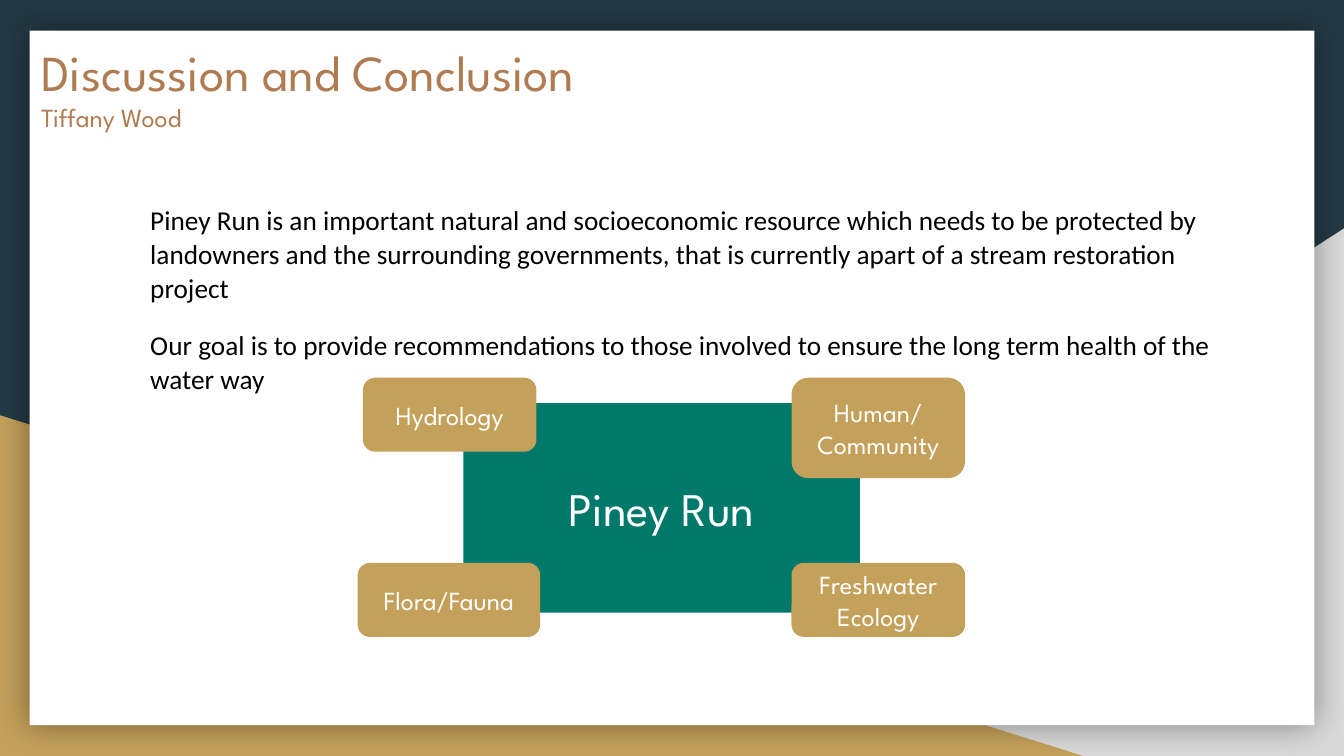
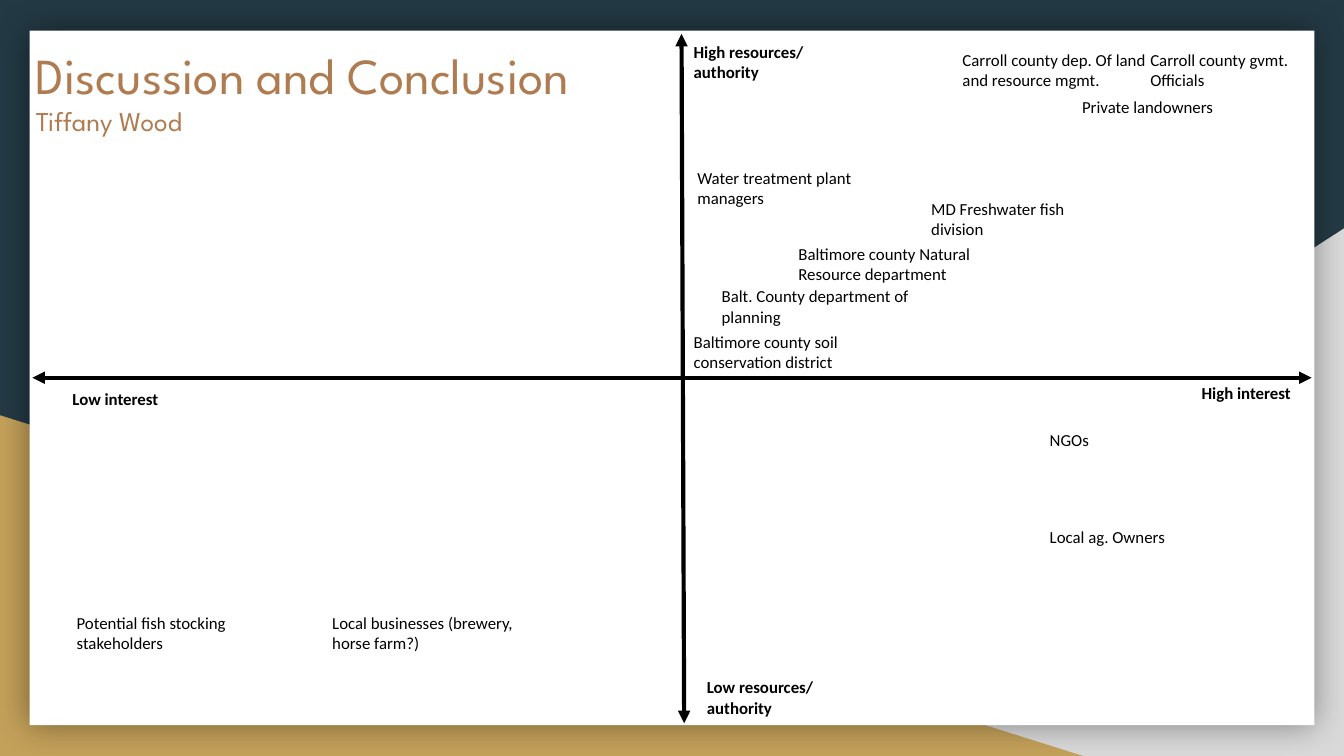
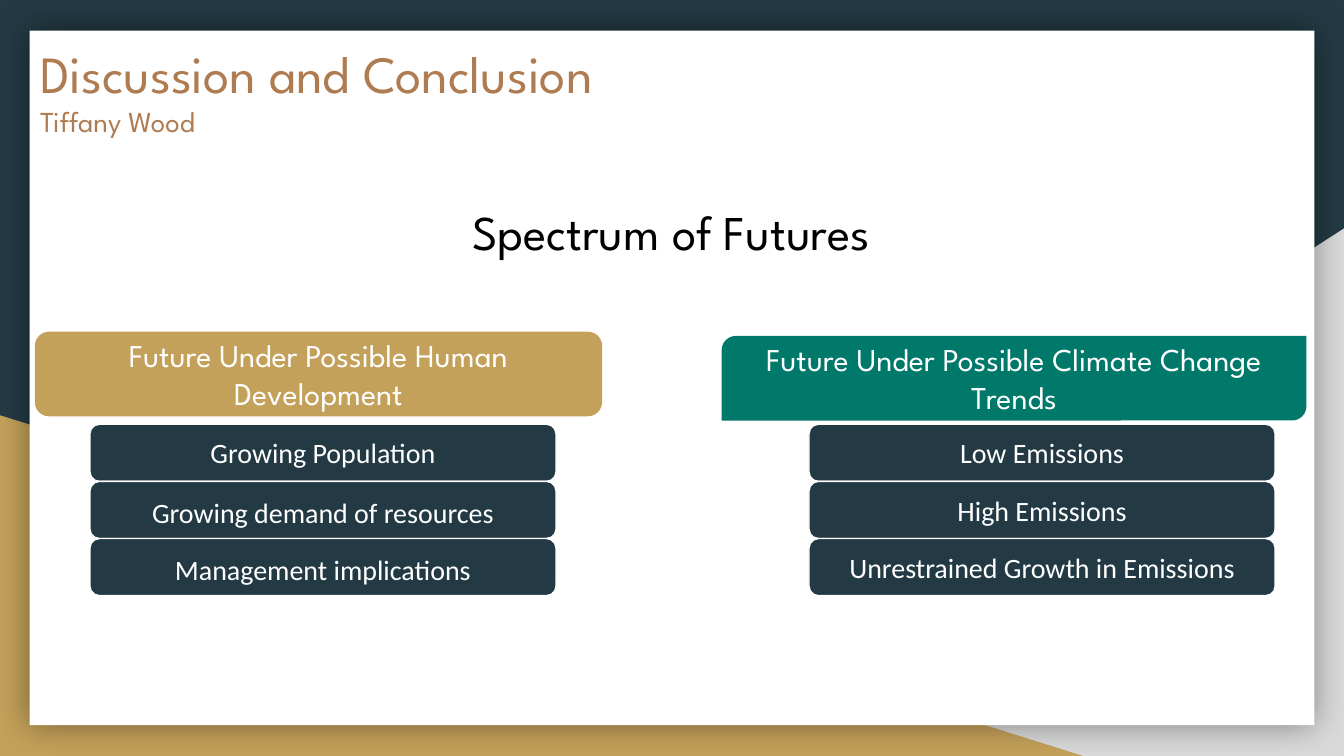
from dataclasses import dataclass

from lxml.etree import SubElement
from pptx import Presentation
from pptx.dml.color import RGBColor
from pptx.enum.shapes import MSO_CONNECTOR, MSO_SHAPE
from pptx.enum.text import MSO_ANCHOR, MSO_AUTO_SIZE, PP_ALIGN
from pptx.oxml.ns import qn
from pptx.util import Cm, Pt


@dataclass(frozen=True)
class Theme:
    # Colours
    navy: str = "233A44"
    gold: str = "C4A15A"
    grey: str = "D9D9D9"
    teal: str = "00796B"
    copper: str = "AF7B51"
    white: str = "FFFFFF"
    black: str = "000000"
    # Fonts
    display: str = "League Spartan"
    text: str = "Calibri"
    # Type sizes
    hub: float = 25
    heading: float = 26
    banner: float = 17
    bar: float = 15
    body: float = 14.6
    card: float = 14
    label: float = 9


T = Theme()
WIDE = (0.25, 0.25)
TIGHT = (0.18, 0.1)
CENTER = {"alignment": PP_ALIGN.CENTER}


# Shared helpers
def apply(target, formats):
    for name, value in formats.items():
        setattr(target, name, value)


def box(x, y, w, h):
    return Cm(x), Cm(y), Cm(w), Cm(h)


def setup_frame(tf, inset=WIDE, **formats):
    dx, dy = Cm(inset[0]), Cm(inset[1])
    apply(tf, {"word_wrap": True, "margin_left": dx, "margin_right": dx,
               "margin_top": dy, "margin_bottom": dy, **formats})


def write(p, text, name, size, color, para=None, bold=False):
    apply(p, para or {})
    r = p.add_run()
    r.text = text
    apply(r.font, {"name": name, "size": Pt(size), "bold": bold})
    r.font.color.rgb = RGBColor.from_string(color)


def paragraphs(tf, count):
    return [tf.paragraphs[0]] + [tf.add_paragraph() for _ in range(count - 1)]


def add_text(s, at, inset=WIDE, **formats):
    tf = s.shapes.add_textbox(*box(*at)).text_frame
    setup_frame(tf, inset, **formats)
    return tf


def add_block(s, kind, at, fill, adjust=(), line=None):
    sp = s.shapes.add_shape(kind, *box(*at))
    sp.shadow.inherit = False
    sp.fill.solid()
    sp.fill.fore_color.rgb = RGBColor.from_string(fill)
    if line:
        sp.line.color.rgb = RGBColor.from_string(line)
        sp.line.width = Pt(0.75)
    else:
        sp.line.fill.background()
    for i, value in enumerate(adjust):
        sp.adjustments[i] = value
    return sp


def add_card(s, at, lines, fill, size, name=T.display, kind=MSO_SHAPE.ROUNDED_RECTANGLE,
             adjust=(0.167,), line=None, spacing=None):
    tf = add_block(s, kind, at, fill, adjust, line).text_frame
    setup_frame(tf, vertical_anchor=MSO_ANCHOR.MIDDLE)
    para = {**CENTER, "line_spacing": spacing}
    for p, text in zip(paragraphs(tf, len(lines)), lines):
        write(p, text, name, size, T.white, para)


def add_glow(sp):
    effects = sp._element.spPr.find(qn("a:effectLst"))
    shadow = SubElement(effects, qn("a:outerShdw"), blurRad=str(Pt(18)), dist="0",
                        algn="ctr", rotWithShape="0")
    color = SubElement(shadow, qn("a:srgbClr"), val=T.black)
    SubElement(color, qn("a:alpha"), val="40000")


def add_axis(s, start, end):
    cn = s.shapes.add_connector(MSO_CONNECTOR.STRAIGHT, *box(*start, *end))
    cn.line.color.rgb = RGBColor.from_string(T.black)
    cn.line.width = Pt(2.25)
    ln = cn.line._get_or_add_ln()
    for tag in ("a:headEnd", "a:tailEnd"):
        SubElement(ln, qn(tag), type="triangle")
    SubElement(cn._element.spPr, qn("a:effectLst"))


def add_label(s, x, y, text, w=3.3, lines=2, bold=False):
    h = 0.96 if lines == 2 else 0.58
    tf = add_text(s, (x, y, w, h), TIGHT, auto_size=MSO_AUTO_SIZE.SHAPE_TO_FIT_TEXT)
    write(tf.paragraphs[0], text, T.text, T.label, T.black, bold=bold)


# Background, panel and title of every slide
def new_slide(prs, title_at, sizes):
    s = prs.slides.add_slide(prs.slide_layouts[6])
    s.background.fill.solid()
    s.background.fill.fore_color.rgb = RGBColor.from_string(T.navy)
    corner = add_block(s, MSO_SHAPE.RIGHT_TRIANGLE, (9.96, 4.32, 15.44, 9.97), T.grey)
    corner._element.spPr.get_or_add_xfrm().set("flipH", "1")
    add_block(s, MSO_SHAPE.RIGHT_TRIANGLE, (0, 7.85, 20.47, 6.44), T.gold)
    add_glow(add_block(s, MSO_SHAPE.RECTANGLE, (0.56, 0.58, 24.28, 13.13), T.white))

    tf = add_text(s, (*title_at, 20.85, 2.64))
    texts = ("Discussion and Conclusion", "Tiffany Wood")
    for p, text, size in zip(paragraphs(tf, 2), texts, sizes):
        write(p, text, T.display, size, T.copper)
    return s


def goal_slide(prs):
    s = new_slide(prs, (0.53, 0.53), (27, 14))
    tf = add_text(s, (2.59, 3.56, 20.85, 3.35))
    first, second = paragraphs(tf, 2)
    write(first, "Piney Run is an important natural and socioeconomic resource which needs "
          "to be protected by landowners and the surrounding governments, that is currently "
          "apart of a stream restoration project",
          T.text, T.body, T.black, {"line_spacing": 1.05})
    write(second, "Our goal is to provide recommendations to those involved to ensure the "
          "long term health of the water way", T.text, T.body, T.black,
          {"line_spacing": 1.05, "space_before": Pt(12), "space_after": Pt(12)})

    # Hub with a topic at each corner
    add_card(s, (8.76, 7.62, 7.49, 3.96), ["Piney Run"], T.teal, T.hub)
    top, bottom, right = 7.14, 10.64, 14.96
    for at, lines in (
        ((6.86, top, 3.28, 1.4), ["Hydrology"]),
        ((6.76, bottom, 3.45, 1.4), ["Flora/Fauna"]),
        ((right, top, 3.28, 1.9), ["Human/", "Community"]),
        ((right, bottom, 3.28, 1.4), ["Freshwater Ecology"]),
    ):
        add_card(s, at, lines, T.gold, T.card)


def stakeholder_slide(prs):
    s = new_slide(prs, (0.43, 0.58), (27, 14.6))
    add_axis(s, (12.93, 13.67), (12.88, 0.64))
    add_axis(s, (24.79, 7.14), (0.61, 7.14))

    # Axis ends
    for x, y, text, lines in (
        (12.93, 0.69, "High resources/ authority", 2),
        (22.53, 7.14, "High interest", 1),
        (13.18, 12.7, "Low resources/ authority", 2),
        (1.19, 7.24, "Low interest", 1),
    ):
        add_label(s, x, y, text, lines=lines, bold=True)

    # Stakeholders
    for x, y, text, w, lines in (
        (19.66, 9.86, "Local ag. Owners", 3.3, 1),
        (14.91, 4.5, "Baltimore county Natural Resource department", 4.34, 2),
        (13, 3.07, "Water treatment plant managers", 3.3, 2),
        (20.27, 1.73, "Private landowners", 3.51, 1),
        (18.01, 0.84, "Carroll county dep. Of land and resource mgmt.", 4.01, 2),
        (17.42, 3.66, "MD Freshwater fish division", 3.3, 2),
        (21.56, 0.84, "Carroll county gvmt. Officials", 3.3, 2),
        (1.27, 11.48, "Potential fish stocking stakeholders", 3.3, 2),
        (6.1, 11.48, "Local businesses (brewery, horse farm?)", 4.01, 2),
        (13.46, 5.31, "Balt. County department of planning", 4.01, 2),
        (19.66, 8.03, "NGOs", 3.3, 1),
        (12.93, 6.17, "Baltimore county soil conservation district", 3.3, 2),
    ):
        add_label(s, x, y, text, w, lines)


def futures_slide(prs):
    s = new_slide(prs, (0.51, 0.53), (28, 15.5))

    # Banners
    for at, text, fill, adjust in (
        ((0.66, 6.27, 10.72, 1.6), "Future Under Possible Human Development",
         T.gold, (0.167, 0.166)),
        ((13.64, 6.35, 11.05, 1.6), "Future Under Possible Climate Change Trends",
         T.teal, (0.167, 0)),
    ):
        add_card(s, at, [text], fill, T.banner,
                 kind=MSO_SHAPE.ROUND_2_DIAG_RECTANGLE, adjust=adjust)

    # Bars under each banner
    for x, bars in (
        (1.7, (("Growing Population", None), ("Growing demand of resources", 1.15),
               ("Management implications", 1.15))),
        (15.29, (("Low Emissions", None), ("High Emissions", None),
                 ("Unrestrained Growth in Emissions", None))),
    ):
        for i, (text, spacing) in enumerate(bars):
            add_card(s, (x, 8.02 + 1.08 * i, 8.81, 1.08), [text], T.navy, T.bar, T.text,
                     line=T.white, spacing=spacing)

    tf = add_text(s, (7.44, 3.56, 10.49, 1.63), auto_size=MSO_AUTO_SIZE.SHAPE_TO_FIT_TEXT)
    write(tf.paragraphs[0], "Spectrum of Futures", T.display, T.heading, T.black, CENTER)


def main():
    prs = Presentation()
    prs.slide_width, prs.slide_height = Cm(25.4), Cm(14.29)
    goal_slide(prs)
    stakeholder_slide(prs)
    futures_slide(prs)
    prs.save("out.pptx")


if __name__ == "__main__":
    main()
